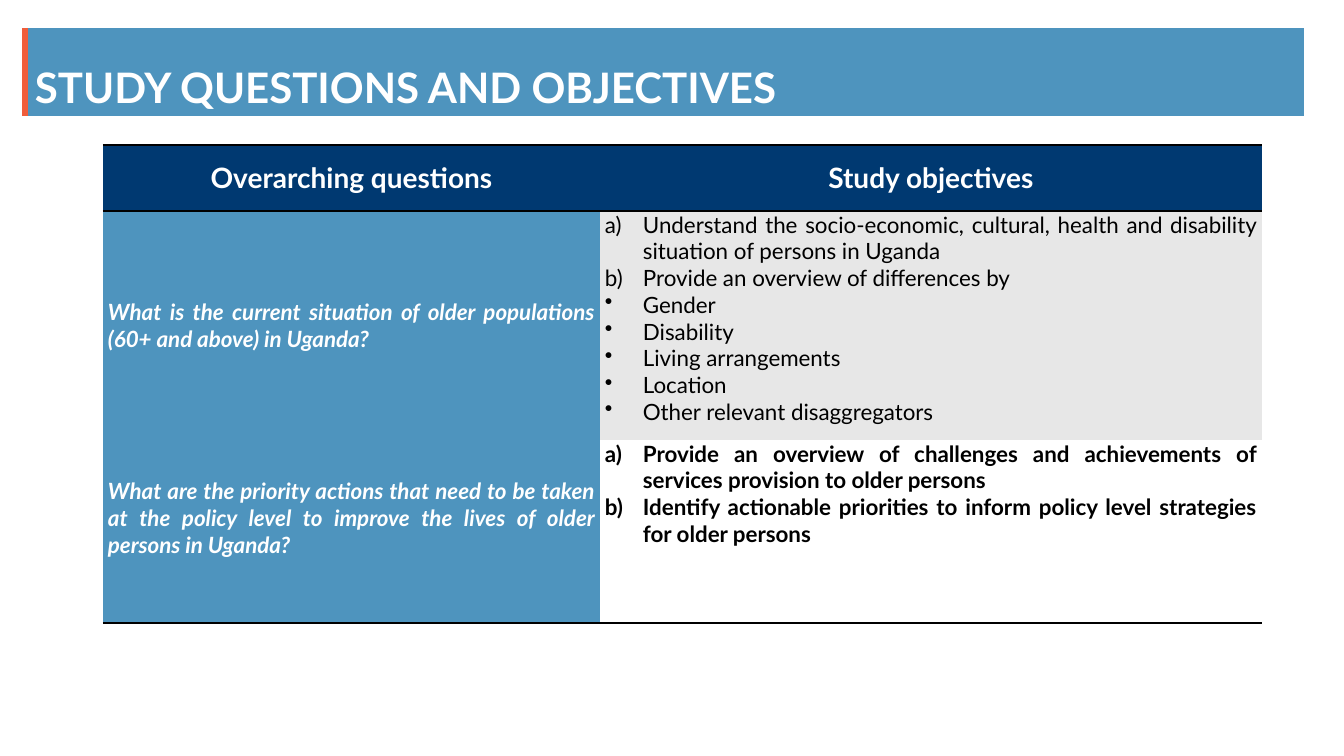
"""Build the study questions and objectives slide."""
import pptx
import pptx.util
import pptx.dml.color
import pptx.enum.shapes
import pptx.enum.text
import pptx.oxml
import pptx.oxml.ns
import lxml.etree

RGBColor = pptx.dml.color.RGBColor
WHITE = RGBColor(0xFF, 0xFF, 0xFF)
BLACK = RGBColor(0, 0, 0)
NAVY = RGBColor(0x00, 0x39, 0x71)
BLUE = RGBColor(0x4E, 0x94, 0xBE)
ORANGE = RGBColor(0xF0, 0x5D, 0x3B)
GREY = RGBColor(0xE7, 0xE7, 0xE7)
ALIGN = pptx.enum.text.PP_ALIGN
ANCHOR = pptx.enum.text.MSO_ANCHOR
SCALE = 914400 / 100.8


def px(length):
    return pptx.util.Emu(round(length * SCALE))


def write(para, text, size, color, **style):
    span = para.add_run()
    span.text = text
    span.font.color.rgb = color
    for name, value in {"name": "Lato", "size": pptx.util.Pt(size), **style}.items():
        setattr(span.font, name, value)


deck = pptx.Presentation()
deck.slide_width, deck.slide_height = px(1344), px(756)
page = deck.slides.add_slide(deck.slide_layouts[6])

band = page.shapes.add_shape(
    pptx.enum.shapes.MSO_SHAPE.RECTANGLE, px(25), px(28), px(1279), px(88))
band.shadow.inherit = False
band.fill.solid()
band.fill.fore_color.rgb = BLUE
band.line.fill.background()

accent = page.shapes.add_connector(
    pptx.enum.shapes.MSO_CONNECTOR.STRAIGHT, px(25), px(28), px(25), px(116))
accent.line.color.rgb = ORANGE
accent.line.width = pptx.util.Pt(4)
lxml.etree.SubElement(accent._element.spPr, pptx.oxml.ns.qn("a:effectLst"))

title = page.shapes.add_textbox(px(25), px(30), px(1279), px(88)).text_frame
title.word_wrap = True
title.vertical_anchor = ANCHOR.BOTTOM
title.paragraphs[0].line_spacing = 0.9
write(title.paragraphs[0], "STUDY QUESTIONS AND OBJECTIVES", 30, WHITE, bold=True)

LETTER = '<a:buAutoNum %s type="alphaLcParenR"/>' % pptx.oxml.ns.nsdecls("a")
DOT = '<a:buChar %s char="•"/>' % pptx.oxml.ns.nsdecls("a")
HEADING = {"size": 20, "color": WHITE, "bold": True}
QUESTION = {"size": 16, "color": WHITE, "bold": True, "italic": True}
OBJECTIVE = {"size": 16, "color": BLACK, "bold": False}
PRIORITY = {**OBJECTIVE, "bold": True}

rows = [
    [(NAVY, HEADING, [(None, "Overarching questions")]),
     (NAVY, HEADING, [(None, "Study objectives")])],
    [(BLUE, QUESTION, [
        (None, "What is the current situation of older populations (60+ and above) in Uganda?")]),
     (GREY, OBJECTIVE, [
         (LETTER, "Understand the socio-economic, cultural, health and disability "
                  "situation of persons in Uganda"),
         (LETTER, "Provide an overview of differences by"),
         (DOT, "Gender"),
         (DOT, "Disability"),
         (DOT, "Living arrangements"),
         (DOT, "Location"),
         (DOT, "Other relevant disaggregators")])],
    [(BLUE, QUESTION, [
        (None, "What are the priority actions that need to be taken at the policy level "
               "to improve the lives of older persons in Uganda?")]),
     (WHITE, PRIORITY, [
         (LETTER, "Provide an overview of challenges and achievements of services "
                  "provision to older persons"),
         (LETTER, "Identify actionable priorities to inform policy level strategies "
                  "for older persons")])],
]
ruled_sides = [("lnT", "lnB"), ("lnT",), ("lnB",)]

table = page.shapes.add_table(3, 2, px(103), px(145), px(1159), px(478)).table
table.first_row = False
table.horz_banding = False
for column, width in zip(table.columns, (497, 662)):
    column.width = px(width)
for row, height in zip(table.rows, (66, 229, 183)):
    row.height = px(height)

for row_index, row in enumerate(rows):
    for column_index, (fill, style, items) in enumerate(row):
        cell = table.cell(row_index, column_index)
        is_list = items[0][0] is not None
        spare_line = 27 if row_index == 2 and not is_list else 0
        margins = {"margin_left": px(5), "margin_right": px(5),
                   "margin_top": px(0), "margin_bottom": px(spare_line),
                   "vertical_anchor": ANCHOR.TOP if is_list else ANCHOR.MIDDLE}
        for name, value in margins.items():
            setattr(cell, name, value)
        for side in ("lnL", "lnR", "lnT", "lnB"):
            paint = "<a:noFill/>"
            if side in ruled_sides[row_index]:
                paint = f'<a:solidFill><a:srgbClr val="{BLACK}"/></a:solidFill>'
            cell._tc.get_or_add_tcPr().append(pptx.oxml.parse_xml(
                '<a:%s %s w="25400">%s</a:%s>'
                % (side, pptx.oxml.ns.nsdecls("a"), paint, side)))
        cell.fill.solid()
        cell.fill.fore_color.rgb = fill
        frame = cell.text_frame
        for item_index, (marker, text) in enumerate(items):
            para = frame.add_paragraph() if item_index else frame.paragraphs[0]
            para.alignment = ALIGN.JUSTIFY if row_index else ALIGN.CENTER
            if marker:
                properties = para._p.get_or_add_pPr()
                properties.set("marL", str(int(px(38))))
                properties.set("indent", str(int(px(-38))))
                properties.append(pptx.oxml.parse_xml(marker))
            write(para, text, **style)

deck.save("out.pptx")
